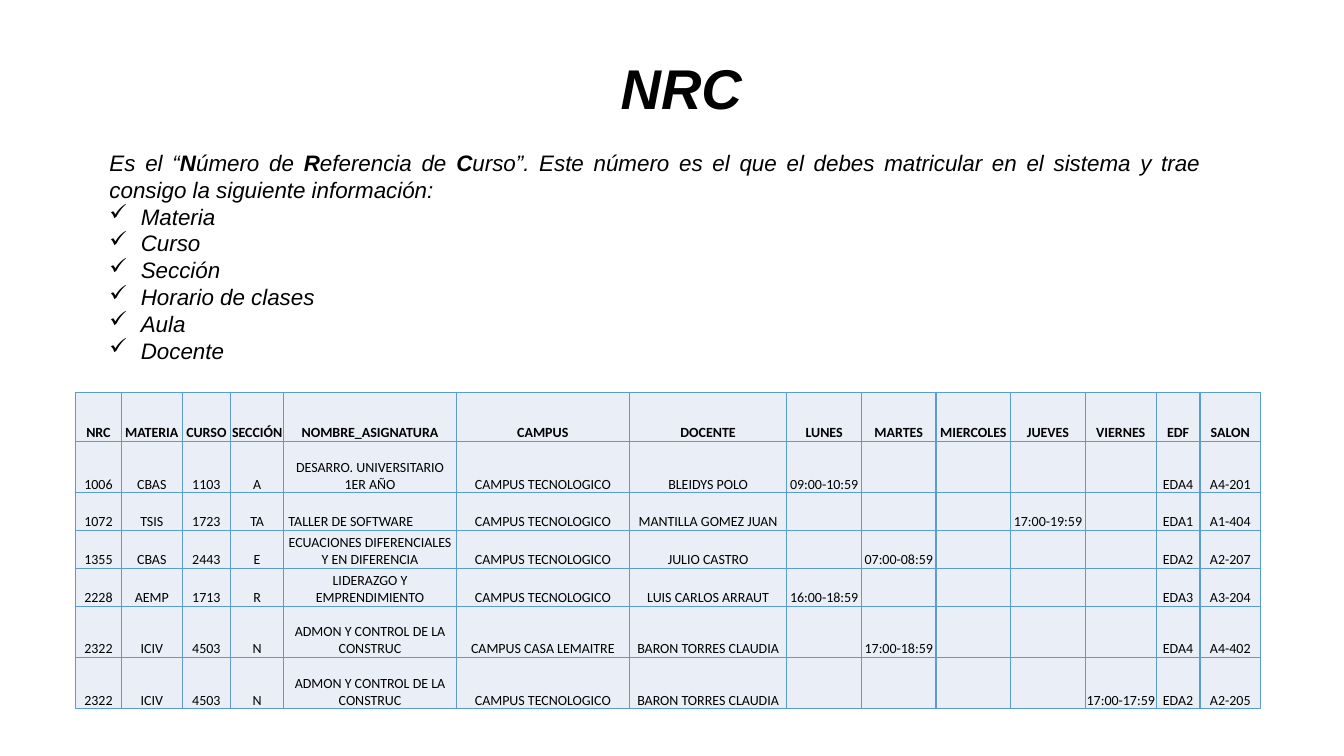
"""Build a slide that explains the NRC course number with a sample timetable."""
from lxml import etree
from pptx import Presentation
from pptx.dml.color import RGBColor
from pptx.enum.text import MSO_ANCHOR, PP_ALIGN
from pptx.oxml.ns import qn
from pptx.util import Cm, Pt

LEFT, MID, JUST = PP_ALIGN.LEFT, PP_ALIGN.CENTER, PP_ALIGN.JUSTIFY
BASE = MSO_ANCHOR.BOTTOM
COLORS = {"ink": "000000", "cell": "EAEFF7", "rule": "5B9BD5"}

INTRO = [
    ("Es el “", False), ("N", True), ("úmero de ", False), ("R", True),
    ("eferencia de ", False), ("C", True),
    ("urso”. Este número es el que el debes matricular en el sistema y trae "
     "consigo la siguiente información:", False),
]
ITEMS = ["Materia", "Curso", "Sección", "Horario de clases", "Aula", "Docente"]

DAYS = ["LUNES", "MARTES", "MIERCOLES", "JUEVES", "VIERNES"]
HEAD = ["NRC", "MATERIA", "CURSO", "SECCIÓN", "NOMBRE_ASIGNATURA", "CAMPUS",
        "DOCENTE", *DAYS, "EDF", "SALON"]
WIDTHS = [1.16, 1.53, 1.22, 1.34, 4.35, 4.36, 3.97, *[1.88] * 4, 1.79, 1.1, 1.53]
HEIGHTS = [1.24, 1.29, 0.94, 0.96, 0.96, 1.29, 1.29]
TECH = "CAMPUS TECNOLOGICO"
SHOP = "TALLER DE SOFTWARE"
ADMON = "ADMON Y CONTROL DE LA CONSTRUC"
COURSES = [
    ("1006", "CBAS", "1103", "A", "DESARRO. UNIVERSITARIO 1ER AÑO", TECH,
     "BLEIDYS POLO", "LUNES", "09:00-10:59", "EDA4", "A4-201"),
    ("1072", "TSIS", "1723", "TA", SHOP, TECH,
     "MANTILLA GOMEZ JUAN", "JUEVES", "17:00-19:59", "EDA1", "A1-404"),
    ("1355", "CBAS", "2443", "E", "ECUACIONES DIFERENCIALES Y EN DIFERENCIA", TECH,
     "JULIO CASTRO", "MARTES", "07:00-08:59", "EDA2", "A2-207"),
    ("2228", "AEMP", "1713", "R", "LIDERAZGO Y EMPRENDIMIENTO", TECH,
     "LUIS CARLOS ARRAUT", "LUNES", "16:00-18:59", "EDA3", "A3-204"),
    ("2322", "ICIV", "4503", "N", ADMON, "CAMPUS CASA LEMAITRE",
     "BARON TORRES CLAUDIA", "MARTES", "17:00-18:59", "EDA4", "A4-402"),
    ("2322", "ICIV", "4503", "N", ADMON, TECH,
     "BARON TORRES CLAUDIA", "VIERNES", "17:00-17:59", "EDA2", "A2-205"),
]


class Deck:
    """Hold the style and the current slide."""

    def __init__(self, slide):
        """Keep the slide to draw on."""
        self.slide = slide

    def style(self, para, size, align, face="Arial", bold=None, slant=None):
        """Set the font and alignment of a paragraph."""
        para.alignment = align
        font = para.font
        font.name, font.size = face, Pt(size)
        font.bold, font.italic = bold, slant
        font.color.rgb = RGBColor.from_string(COLORS["ink"])

    def box(self, left, top, width, height):
        """Add a wrapping text box and return its frame."""
        shape = self.slide.shapes.add_textbox(Cm(left), Cm(top), Cm(width), Cm(height))
        shape.text_frame.word_wrap = True
        return shape.text_frame

    def title(self, text, *place):
        """Add the slide title."""
        para = self.box(*place).paragraphs[0]
        para.text = text
        self.style(para, 40, MID, bold=True, slant=True)

    def body(self, intro, items, *place):
        """Add the opening sentence and its checklist."""
        frame = self.box(*place)
        para = frame.paragraphs[0]
        for text, bold in intro:
            run = para.add_run()
            run.text, run.font.bold = text, bold
        self.style(para, 16, JUST, slant=True)
        for item in items:
            para = frame.add_paragraph()
            para.text = item
            self.style(para, 16, JUST, slant=True)
            self.check(para)

    def check(self, para):
        """Give a paragraph a hanging check mark."""
        props = para._p.get_or_add_pPr()
        props.set("marL", str(Cm(0.79)))
        props.set("indent", str(Cm(-0.79)))
        mark = etree.Element(qn("a:buChar"), char="✓")
        props.insert(0, mark)

    def cell(self, cell, text, bold):
        """Fill one table cell and draw its borders."""
        cell.margin_left = cell.margin_right = cell.margin_top = Cm(0.02)
        cell.margin_bottom = 0
        cell.vertical_anchor = BASE
        para = cell.text_frame.paragraphs[0]
        para.text = text
        self.style(para, 10, MID, "Calibri", bold)
        if text == SHOP:
            para.alignment = LEFT
            cell.margin_left = Cm(0.12)
        cell.fill.solid()
        cell.fill.fore_color.rgb = RGBColor.from_string(COLORS["cell"])
        props = cell._tc.get_or_add_tcPr()
        for spot, side in enumerate(("lnL", "lnR", "lnT", "lnB")):
            line = etree.Element(qn("a:" + side), w=str(Pt(1)))
            fill = etree.SubElement(line, qn("a:solidFill"))
            etree.SubElement(fill, qn("a:srgbClr"), val=COLORS["rule"])
            props.insert(spot, line)

    def table(self, rows, left, top):
        """Add the timetable with a bold header row."""
        frame = self.slide.shapes.add_table(
            len(rows), len(WIDTHS), Cm(left), Cm(top), Cm(sum(WIDTHS)), Cm(sum(HEIGHTS)))
        grid = frame.table
        grid.first_row = grid.horz_banding = False
        for col, width in zip(grid.columns, WIDTHS):
            col.width = Cm(width)
        for index, (row, height) in enumerate(zip(rows, HEIGHTS)):
            grid.rows[index].height = Cm(height)
            for spot, text in enumerate(row):
                self.cell(grid.cell(index, spot), text, index == 0)


def expand(course):
    """Spread the class time over the weekday columns."""
    *lead, day, time, site, room = course
    return [*lead, *(time if name == day else "" for name in DAYS), site, room]


def main():
    """Build and save the slide."""
    show = Presentation()
    show.slide_width, show.slide_height = Cm(33.87), Cm(19.05)
    deck = Deck(show.slides.add_slide(show.slide_layouts[6]))
    deck.title("NRC", 5.84, 1.22, 22.66, 1.96)
    deck.body(INTRO, ITEMS, 2.51, 3.63, 27.99, 5.89)
    deck.table([HEAD, *map(expand, COURSES)], 1.9, 9.89)
    show.save("out.pptx")


if __name__ == "__main__":
    main()
